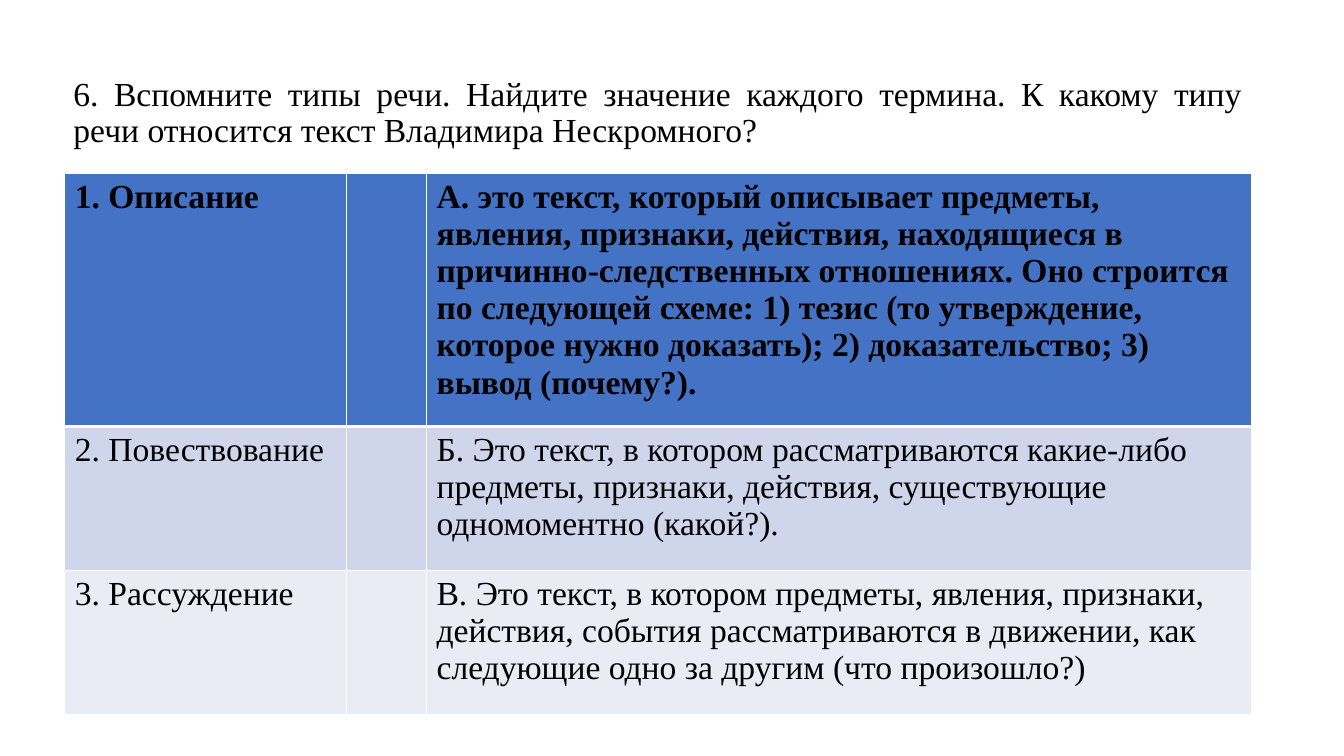
from lxml import etree
from pptx import Presentation
from pptx import util as u
from pptx.dml.color import RGBColor
from pptx.enum import text
from pptx.oxml.ns import qn

TITLE = ("6. Вспомните типы речи. Найдите значение каждого термина. "
         "К какому типу речи относится текст Владимира Нескромного?")
ROWS = [
    ("1. Описание", "",
     "А. это текст, который описывает предметы, явления, признаки, действия, "
     "находящиеся в причинно-следственных отношениях. Оно строится по следующей "
     "схеме: 1) тезис (то утверждение, которое нужно доказать); "
     "2) доказательство; 3) вывод (почему?)."),
    ("2. Повествование", "",
     "Б. Это текст, в котором рассматриваются какие-либо предметы, признаки, "
     "действия, существующие одномоментно (какой?)."),
    ("3. Рассуждение", "",
     "В. Это текст, в котором предметы, явления, признаки, действия, события "
     "рассматриваются в движении, как следующие одно за другим (что произошло?)"),
]
COLORS = {"text": "000000", "border": "FFFFFF", "header": "4472C4",
          "odd": "CFD5EA", "even": "E9EBF5"}
ROW_FILLS = ["header", "odd", "even"]
COL_WIDTHS = [7.11, 2.01, 20.8]
ROW_HEIGHTS = [6.38, 3.63, 3.63]
FONT = "Times New Roman"


def write(tf, content, size=24, bold=False, align=None, spacing=None):
    p = tf.paragraphs[0]
    p.alignment = align
    p.line_spacing = spacing
    r = p.add_run()
    r.text = content
    r.font.name = FONT
    r.font.size = u.Pt(size)
    r.font.bold = bold
    r.font.color.rgb = RGBColor.from_string(COLORS["text"])


def set_borders(cell, **widths):
    """Draw the cell's sides; widths maps L, R, T, B to points."""
    tc_pr = cell._tc.get_or_add_tcPr()
    for i, (side, width) in enumerate(widths.items()):
        ln = etree.Element(qn("a:ln" + side), w=str(u.Pt(width)))
        fill = etree.SubElement(ln, qn("a:solidFill"))
        etree.SubElement(fill, qn("a:srgbClr"), val=COLORS["border"])
        tc_pr.insert(i, ln)


def add_title(s):
    sp = s.shapes.add_textbox(u.Cm(1.6), u.Cm(1.02), u.Cm(29.95), u.Cm(3.68))
    tf = sp.text_frame
    tf.word_wrap = True
    tf.vertical_anchor = text.MSO_ANCHOR.MIDDLE
    write(tf, TITLE, align=text.PP_ALIGN.JUSTIFY, spacing=0.9)


def add_speech_types(s):
    table = s.shapes.add_table(
        len(ROWS), len(COL_WIDTHS), u.Cm(1.63), u.Cm(4.37),
        u.Cm(sum(COL_WIDTHS)), u.Cm(sum(ROW_HEIGHTS))).table
    for col, width in zip(table.columns, COL_WIDTHS):
        col.width = u.Cm(width)
    for i, (row, height) in enumerate(zip(table.rows, ROW_HEIGHTS)):
        row.height = u.Cm(height)
        for cell, content in zip(row.cells, ROWS[i]):
            cell.fill.solid()
            cell.fill.fore_color.rgb = RGBColor.from_string(COLORS[ROW_FILLS[i]])
            set_borders(cell, L=1, R=1, T=3 if i == 1 else 1, B=3 if i == 0 else 1)
            if content:
                write(cell.text_frame, content, bold=i == 0)


def main():
    prs = Presentation()
    prs.slide_width, prs.slide_height = u.Cm(33.87), u.Cm(19.05)
    s = prs.slides.add_slide(prs.slide_layouts[6])
    add_title(s)
    add_speech_types(s)
    prs.save("out.pptx")


if __name__ == "__main__":
    main()
